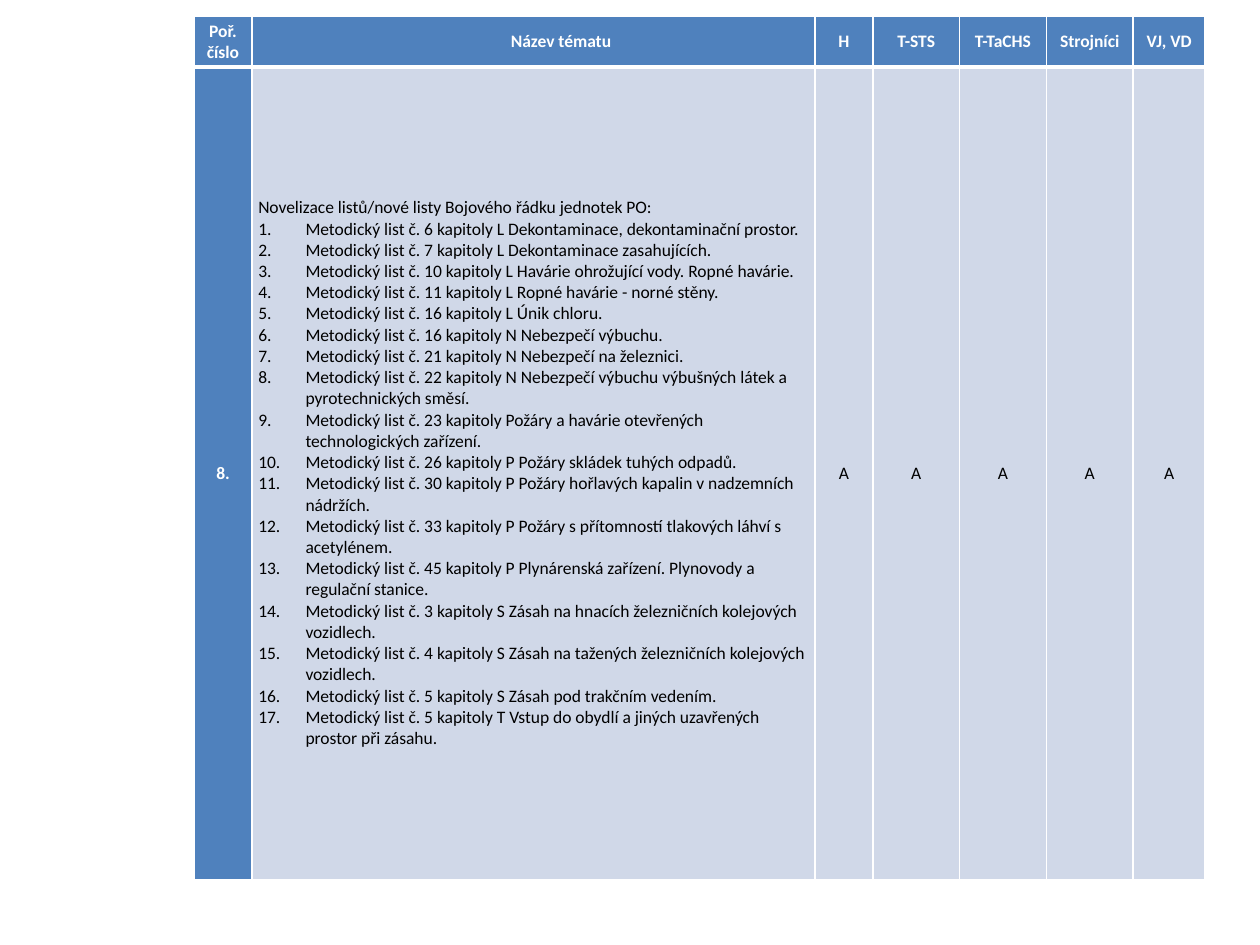
from lxml.etree import SubElement
from pptx import Presentation
from pptx.dml.color import RGBColor
from pptx.enum.text import MSO_ANCHOR, PP_ALIGN
from pptx.oxml.ns import qn
from pptx.util import Pt

WHITE = RGBColor(0xFF, 0xFF, 0xFF)
BLACK = RGBColor(0, 0, 0)
BLUE = RGBColor(0x4F, 0x81, 0xBD)
PALE = RGBColor(0xD0, 0xD8, 0xE8)

COL_WIDTHS = [33.1, 321.7, 33.1, 49.6, 49.6, 49.6, 41.2]
ROW_HEIGHTS = [28.8, 464.4]
TITLE_INDENT = Pt(31.5)
LIST_INDENT = Pt(27)

HEADERS = ["Poř. číslo", "Název tématu", "H", "T-STS", "T-TaCHS", "Strojníci", "VJ, VD"]
NUMBER = "8."
INTRO = "Novelizace listů/nové listy Bojového řádku jednotek PO:"
SHEETS = [
    "6 kapitoly L Dekontaminace, dekontaminační prostor.",
    "7 kapitoly L Dekontaminace zasahujících.",
    "10 kapitoly L Havárie ohrožující vody. Ropné havárie.",
    "11 kapitoly L Ropné havárie - norné stěny.",
    "16 kapitoly L Únik chloru.",
    "16 kapitoly N Nebezpečí výbuchu.",
    "21 kapitoly N Nebezpečí na železnici.",
    "22 kapitoly N Nebezpečí výbuchu výbušných látek a pyrotechnických směsí.",
    "23 kapitoly Požáry a havárie otevřených technologických zařízení.",
    "26 kapitoly P Požáry skládek tuhých odpadů.",
    "30 kapitoly P Požáry hořlavých kapalin v nadzemních nádržích.",
    "33 kapitoly P Požáry s přítomností tlakových láhví s acetylénem.",
    "45 kapitoly P Plynárenská zařízení. Plynovody a regulační stanice.",
    "3 kapitoly S Zásah na hnacích železničních kolejových vozidlech.",
    "4 kapitoly S Zásah na tažených železničních kolejových vozidlech.",
    "5 kapitoly S Zásah pod trakčním vedením.",
    "5 kapitoly T Vstup do obydlí a jiných uzavřených prostor při zásahu.",
]


def add_text(p, text, color, bold=False, align=PP_ALIGN.CENTER):
    """Add one formatted run to a paragraph."""
    p.alignment = align
    r = p.add_run()
    r.text = text
    r.font.name = "Calibri"
    r.font.size = Pt(10)
    r.font.bold = bold
    r.font.color.rgb = color


def number_paragraph(p):
    """Give a paragraph automatic numbering with a hanging indent."""
    pPr = p._p.get_or_add_pPr()
    pPr.set("marL", str(LIST_INDENT))
    pPr.set("indent", str(-LIST_INDENT))
    SubElement(pPr, qn("a:buFont"), typeface="+mj-lt")
    SubElement(pPr, qn("a:buAutoNum"), type="arabicPeriod")


def set_borders(cell, widths):
    """Draw white borders, with widths in left, right, top, bottom order."""
    tcPr = cell._tc.get_or_add_tcPr()
    for i, (side, width) in enumerate(zip("LRTB", widths)):
        ln = SubElement(tcPr, qn(f"a:ln{side}"), w=str(Pt(width)))
        fill = SubElement(ln, qn("a:solidFill"))
        SubElement(fill, qn("a:srgbClr"), val=str(WHITE))
        tcPr.insert(i, ln)


def format_cell(cell, color, widths):
    """Set the fill, insets, anchor and borders of a cell."""
    cell.fill.solid()
    cell.fill.fore_color.rgb = color
    cell.margin_left = cell.margin_right = Pt(3.6)
    cell.margin_top = cell.margin_bottom = 0
    cell.vertical_anchor = MSO_ANCHOR.MIDDLE
    set_borders(cell, widths)


def fill_topic(tf):
    """Write the introduction and the numbered list of sheets."""
    add_text(tf.paragraphs[0], INTRO, BLACK, align=PP_ALIGN.LEFT)
    for sheet in SHEETS:
        p = tf.add_paragraph()
        add_text(p, f"Metodický list č. {sheet}", BLACK, align=PP_ALIGN.LEFT)
        number_paragraph(p)


def add_topic_table(slide, left, top):
    """Place the training topic table at the given corner."""
    frame = slide.shapes.add_table(2, len(HEADERS), Pt(left), Pt(top),
                                   Pt(sum(COL_WIDTHS)), Pt(sum(ROW_HEIGHTS)))
    table = frame.table
    for col, width in zip(table.columns, COL_WIDTHS):
        col.width = Pt(width)
    for row, height in zip(table.rows, ROW_HEIGHTS):
        row.height = Pt(height)
    for c, header in enumerate(HEADERS):
        head, body = table.cell(0, c), table.cell(1, c)
        format_cell(head, BLUE, (1, 1, 1, 3))
        format_cell(body, PALE if c else BLUE, (1, 1, 3, 1))
        add_text(head.text_frame.paragraphs[0], header, WHITE, bold=True)
        p = body.text_frame.paragraphs[0]
        if c == 0:
            add_text(p, NUMBER, WHITE, bold=True)
        elif c == 1:
            head.text_frame.paragraphs[0]._p.get_or_add_pPr().set("marL", str(TITLE_INDENT))
            fill_topic(body.text_frame)
        else:
            add_text(p, "A", BLACK)


def main():
    """Build and save the slide."""
    prs = Presentation()
    prs.slide_width, prs.slide_height = Pt(720), Pt(540)
    slide = prs.slides.add_slide(prs.slide_layouts[6])
    add_topic_table(slide, 110.9, 9.4)
    prs.save("out.pptx")


if __name__ == "__main__":
    main()
